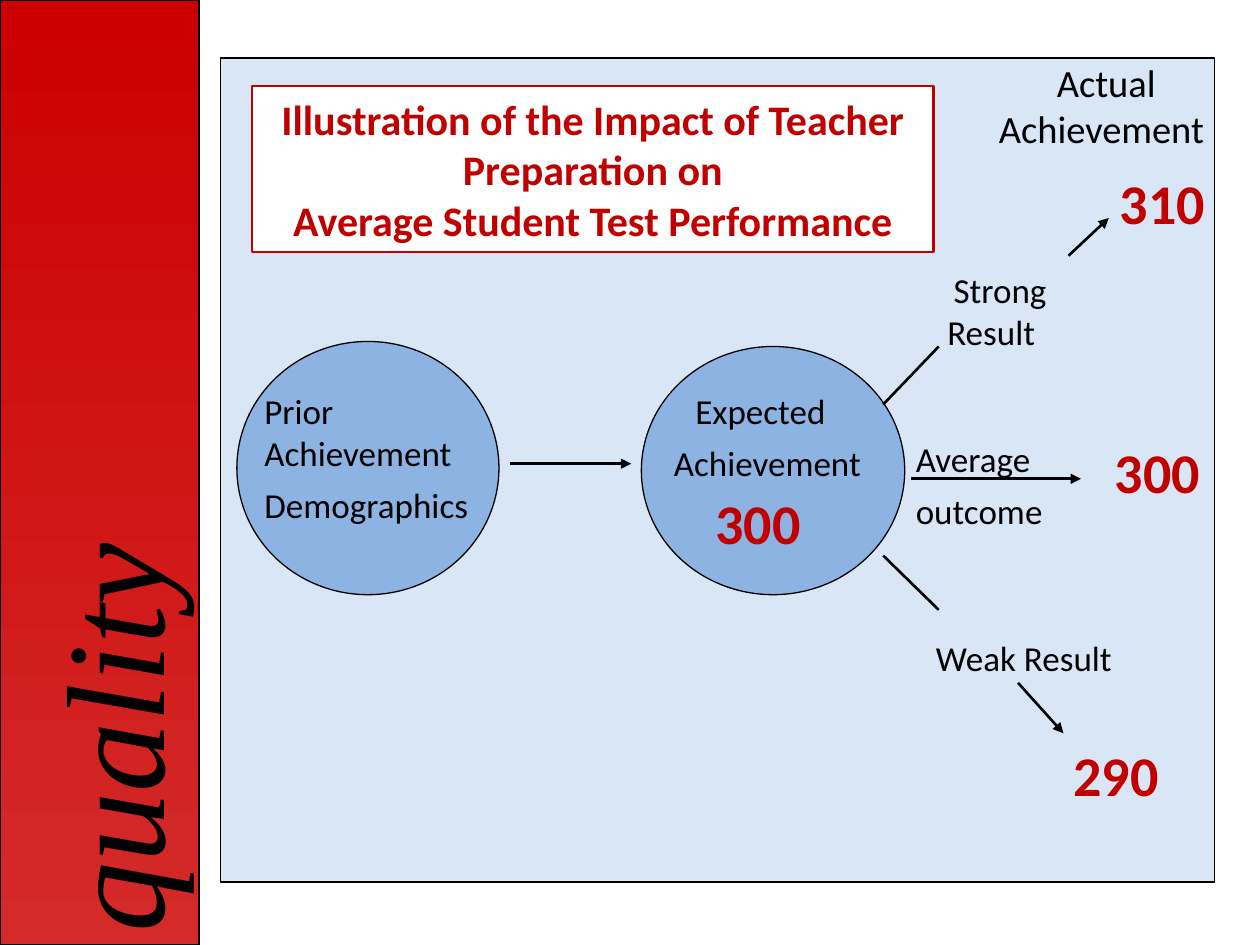
from dataclasses import dataclass

from lxml.etree import SubElement
from pptx import Presentation
from pptx.dml.color import RGBColor
from pptx.enum.shapes import MSO_CONNECTOR, MSO_SHAPE
from pptx.enum.text import MSO_ANCHOR, PP_ALIGN
from pptx.oxml.ns import qn
from pptx.util import Inches, Pt

COLORS = {
    "black": "000000",
    "white": "FFFFFF",
    "band_top": "CC0000",
    "band_bottom": "D42A2A",
    "panel": "C6D9F1",
    "circle": "8DB3E2",
    "accent": "C00000",
}


@dataclass(frozen=True)
class Style:
    size: float
    color: str = "black"
    bold: bool = False
    italic: bool = False
    font: str = "Calibri"
    after: float = 0


LABEL = Style(20, after=6)
SCORE = Style(32, "accent", bold=True, after=10)
HEADING = Style(22, after=10)
TITLE = Style(24, "accent", bold=True)
BAND = Style(80, italic=True, font="Times New Roman")


@dataclass(frozen=True)
class Box:
    x: float
    y: float
    w: float
    h: float


@dataclass(frozen=True)
class Label:
    box: Box
    lines: tuple[str, ...]
    style: Style = LABEL
    indent: float = 0


@dataclass(frozen=True)
class Line:
    x1: float
    y1: float
    x2: float
    y2: float
    arrow: bool = False


LABELS = [
    Label(Box(2, 3.04, 1.85, 0.96), ("Prior Achievement", "Demographics")),
    Label(Box(5.25, 3.04, 1.83, 1.5), ("Expected", "Achievement"), indent=0.17),
    Label(Box(7.42, 2.08, 1.2, 0.8), ("Strong Result",), indent=0.05),
    Label(Box(7.17, 3.42, 2.4, 1.02), ("Average", "outcome")),
    Label(Box(7.08, 5, 1.85, 0.66), ("Weak Result",), indent=0.25),
    Label(Box(7.83, 0.42, 1.92, 0.95), ("Actual Achievement",), HEADING, 0.46),
    Label(Box(5.58, 3.83, 1, 0.72), ("300",), SCORE),
    Label(Box(8.79, 1.29, 1, 0.72), ("310",), SCORE),
    Label(Box(8.75, 3.42, 1, 0.72), ("300",), SCORE),
    Label(Box(8.42, 5.83, 1, 0.72), ("290",), SCORE),
]

LINES = [
    Line(4.05, 3.68, 5.01, 3.68, True),
    Line(7.23, 3.8, 8.58, 3.8, True),
    Line(7.01, 4.41, 7.45, 4.84),
    Line(8.08, 5.42, 8.44, 5.82, True),
    Line(8.48, 2.03, 8.8, 1.73, True),
    Line(7.45, 2.75, 7.01, 3.21),
]


def rgb(name: str) -> RGBColor:
    return RGBColor.from_string(COLORS[name])


def lengths(box: Box) -> tuple:
    return tuple(Inches(v) for v in (box.x, box.y, box.w, box.h))


def add_text(tf, lines: tuple[str, ...], style: Style, align=PP_ALIGN.LEFT, indent: float = 0) -> None:
    tf.word_wrap = True
    for i, text in enumerate(lines):
        p = tf.paragraphs[0] if i == 0 else tf.add_paragraph()
        p.alignment = align
        p.space_after = Pt(style.after)
        if i == 0 and indent:
            p._p.get_or_add_pPr().set("indent", str(Inches(indent)))
        r = p.add_run()
        r.text = text
        r.font.name = style.font
        r.font.size = Pt(style.size)
        r.font.bold = style.bold
        r.font.italic = style.italic
        r.font.color.rgb = rgb(style.color)


def add_shape(s, kind, box: Box, fill: str, line: str = "black", width: float = 0.75):
    sp = s.shapes.add_shape(kind, *lengths(box))
    sp.shadow.inherit = False
    sp.fill.solid()
    sp.fill.fore_color.rgb = rgb(fill)
    sp.line.color.rgb = rgb(line)
    sp.line.width = Pt(width)
    return sp


def add_label(s, label: Label) -> None:
    sp = s.shapes.add_textbox(*lengths(label.box))
    add_text(sp.text_frame, label.lines, label.style, indent=label.indent)


def add_line(s, line: Line) -> None:
    ends = (Inches(v) for v in (line.x1, line.y1, line.x2, line.y2))
    cx = s.shapes.add_connector(MSO_CONNECTOR.STRAIGHT, *ends)
    cx.line.color.rgb = rgb("black")
    cx.line.width = Pt(1.5)
    if line.arrow:
        SubElement(cx.line._get_or_add_ln(), qn("a:tailEnd"), type="triangle")
    SubElement(cx._element.spPr, qn("a:effectLst"))


def add_band(s) -> None:
    sp = add_shape(s, MSO_SHAPE.RECTANGLE, Box(0, 0, 1.58, 7.5), "band_top")
    sp.fill.gradient()
    sp.fill.gradient_angle = 270
    for stop, name in zip(sp.fill.gradient_stops, ("band_top", "band_bottom")):
        stop.color.rgb = rgb(name)
    tf = sp.text_frame
    tf.vertical_anchor = MSO_ANCHOR.BOTTOM
    tf._txBody.bodyPr.set("vert", "vert270")
    add_text(tf, ("quality",), BAND)


def main() -> None:
    prs = Presentation()
    prs.slide_width, prs.slide_height = Inches(10), Inches(7.5)
    s = prs.slides.add_slide(prs.slide_layouts[6])

    add_band(s)
    panel = add_shape(s, MSO_SHAPE.RECTANGLE, Box(1.75, 0.46, 7.89, 6.54), "panel")
    tint = panel._element.spPr.find(qn("a:solidFill"))[0]
    SubElement(tint, qn("a:alpha"), val="65000")
    for box in (Box(5.09, 2.75, 2.09, 1.97), Box(1.88, 2.71, 2.08, 2.01)):
        add_shape(s, MSO_SHAPE.OVAL, box, "circle")

    for label in LABELS:
        add_label(s, label)
    for line in LINES:
        add_line(s, line)

    title = add_shape(s, MSO_SHAPE.RECTANGLE, Box(2, 0.68, 5.41, 1.32), "white", "accent", 1.25)
    add_text(
        title.text_frame,
        ("Illustration of the Impact of Teacher Preparation on", "Average Student Test Performance"),
        TITLE,
        PP_ALIGN.CENTER,
    )
    prs.save("out.pptx")


if __name__ == "__main__":
    main()
